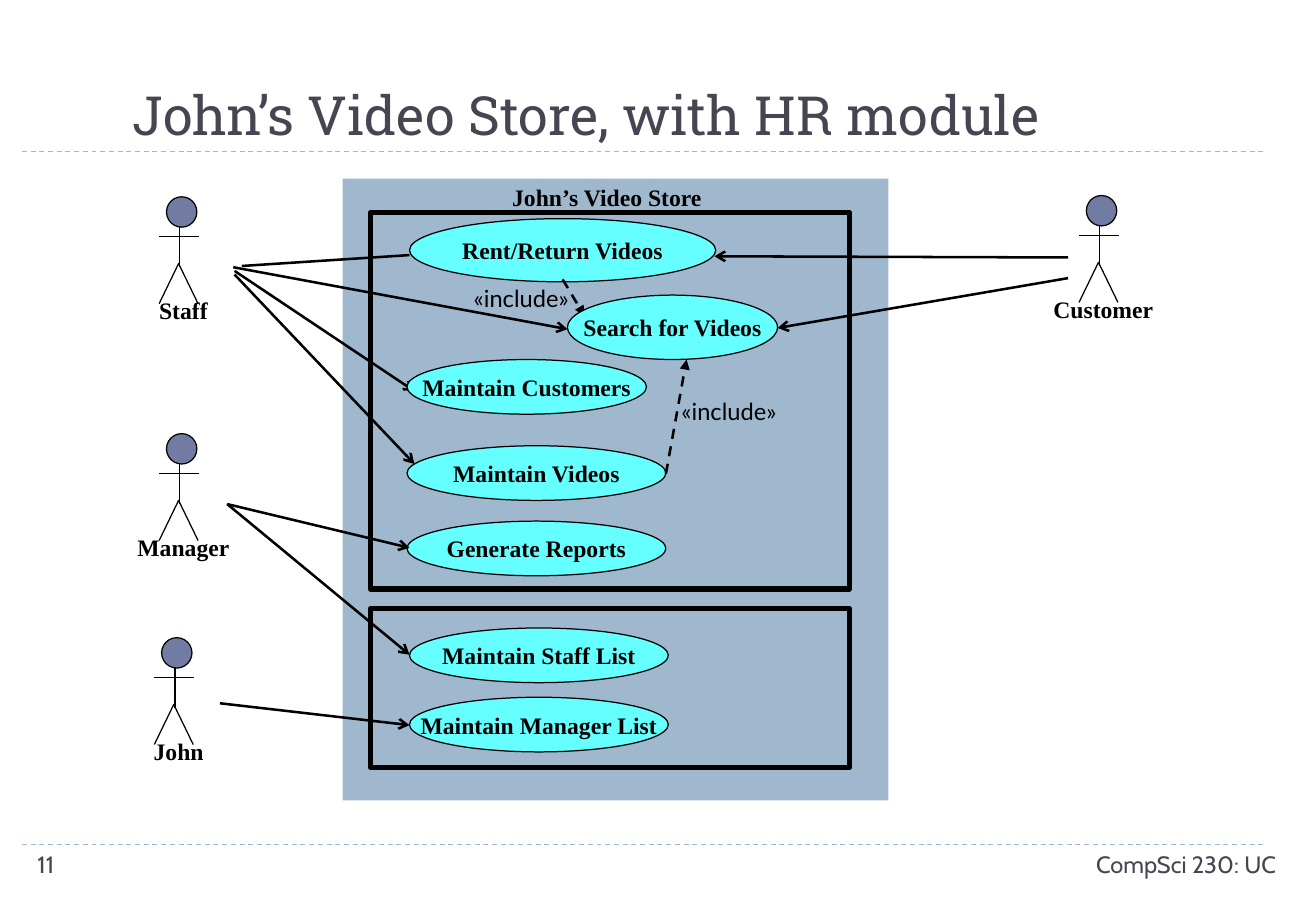
from pptx import Presentation
from pptx.dml.color import RGBColor
from pptx.enum.dml import MSO_LINE
from pptx.enum.shapes import MSO_CONNECTOR, MSO_SHAPE
from pptx.enum.text import MSO_ANCHOR, MSO_AUTO_SIZE, PP_ALIGN
from pptx.oxml.ns import qn
from pptx.util import Inches, Pt
from lxml.etree import SubElement

THEME = {
    "ink": "000000", "text": "464653", "panel": "9FB8CD",
    "head": "727CA3", "use_case": "66FFFF",
    "thin": 0.75, "link": 1.5, "frame": 3,
    "title": {"name": "Roboto Slab", "size": Pt(32)},
    "footer": {"name": "Cabin", "size": Pt(14)},
    "label": {"name": "Times New Roman", "size": Pt(14), "bold": True},
    "include": {"name": "Lato", "size": Pt(14)},
}

SLIDE_W, SLIDE_H = 10.83, 7.5
RULES = [1.25, 6.95]
PAGE_TEXTS = [
    ("John’s Video Store, with HR module", (0.99, 0.17, 9.55, 1.08), "title",
     PP_ALIGN.LEFT, MSO_ANCHOR.BOTTOM),
    ("CompSci 230: UC", (7.89, 6.95, 2.71, 0.4), "footer", PP_ALIGN.RIGHT, MSO_ANCHOR.TOP),
    ("11", (0.21, 6.95, 2.35, 0.4), "footer", PP_ALIGN.LEFT, MSO_ANCHOR.TOP),
]
SYSTEM = (2.82, 1.47, 4.49, 5.12)
MODULES = [(3.05, 1.75, 3.94, 3.1), (3.05, 5.01, 3.94, 1.31)]
ACTORS = [
    ("Staff", 1.37, 1.62, 0.6),
    ("Customer", 8.94, 1.61, 1.03),
    ("Manager", 1.37, 3.57, 0.97),
    ("John", 1.33, 5.25, 0.62),
]
RENT = ("Rent/Return Videos", (3.37, 1.8, 2.52, 0.52))
USE_CASES = [
    ("Search for Videos", (4.67, 2.43, 1.73, 0.53)),
    ("Maintain Customers", (3.35, 2.96, 1.97, 0.45)),
    ("Maintain Videos", (3.35, 3.67, 2.13, 0.45)),
    ("Generate Reports", (3.35, 4.29, 2.13, 0.45)),
    ("Maintain Staff List", (3.37, 5.17, 2.13, 0.45)),
    ("Maintain Manager List", (3.37, 5.74, 2.13, 0.45)),
]
COVERED_LINKS = [
    ((1.93, 2.23), (3.41, 3.22), "arrow", False),
    ((4.63, 2.3), (4.81, 2.6), "triangle", True),
]
LINKS = [
    ((1.99, 2.19), (3.37, 2.1), None, False),
    ((1.92, 2.2), (4.67, 2.71), "arrow", False),
    ((1.93, 2.26), (3.41, 3.82), "arrow", False),
    ((1.87, 4.15), (3.37, 4.51), "arrow", False),
    ((1.87, 4.15), (3.37, 5.39), "arrow", False),
    ((1.81, 5.79), (3.37, 5.97), "arrow", False),
    ((8.79, 2.12), (5.88, 2.11), "arrow", False),
    ((8.79, 2.29), (6.4, 2.7), "arrow", False),
    ((5.48, 3.9), (5.65, 2.96), "triangle", True),
]
LABELS = [
    ("John’s Video Store", (4.11, 1.46, 1.77, 0.34), "label"),
    ("«include»", (5.48, 3.22, 1.04, 0.34), "include"),
    ("«include»", (3.77, 2.29, 1.04, 0.34), "include"),
]


def color(name):
    return RGBColor.from_string(THEME[name])


def write(sp, text, style, ink="ink", align=PP_ALIGN.CENTER, anchor=MSO_ANCHOR.TOP, wrap=False):
    tf = sp.text_frame
    tf.word_wrap = wrap
    tf.vertical_anchor = anchor
    p = tf.paragraphs[0]
    p.alignment = align
    r = p.add_run()
    r.text = text
    for key, value in THEME[style].items():
        setattr(r.font, key, value)
    r.font.color.rgb = color(ink)


def add_label(shapes, text, box, style):
    sp = shapes.add_textbox(*map(Inches, box))
    write(sp, text, style)
    sp.text_frame.auto_size = MSO_AUTO_SIZE.SHAPE_TO_FIT_TEXT


def paint(sp, fill=None, width=None):
    sp.shadow.inherit = False
    if fill:
        sp.fill.solid()
        sp.fill.fore_color.rgb = color(fill)
    else:
        sp.fill.background()
    if width:
        sp.line.color.rgb = color("ink")
        sp.line.width = Pt(width)
    else:
        sp.line.fill.background()


def add_box(shapes, kind, box, fill=None, width=None):
    sp = shapes.add_shape(kind, *map(Inches, box))
    paint(sp, fill, width)
    return sp


def add_line(shapes, start, end, width, ink="ink", arrow=None, dashed=False):
    line = shapes.add_connector(MSO_CONNECTOR.STRAIGHT, *map(Inches, start + end))
    line.line.color.rgb = color(ink)
    line.line.width = Pt(width)
    if dashed:
        line.line.dash_style = MSO_LINE.DASH
    sp_pr = line.element.spPr
    if arrow:
        SubElement(sp_pr.find(qn("a:ln")), qn("a:tailEnd"), type=arrow)
    SubElement(sp_pr, qn("a:effectLst"))


def add_actor(shapes, name, x, y, label_w):
    actor = shapes.add_group_shape().shapes
    thin = THEME["thin"]
    add_box(actor, MSO_SHAPE.OVAL, (x, y, 0.25, 0.25), "head", thin)
    add_line(actor, (x + 0.11, y + 0.25), (x + 0.11, y + 0.58), thin)
    add_line(actor, (x - 0.06, y + 0.33), (x + 0.27, y + 0.33), thin)
    foot, hip, other_foot = [(Inches(x + dx), Inches(y + dy))
                             for dx, dy in [(-0.06, 0.88), (0.1, 0.55), (0.26, 0.88)]]
    legs = actor.build_freeform(*foot)
    legs.add_line_segments([hip, other_foot], close=False)
    paint(legs.convert_to_shape(), width=thin)
    add_label(actor, name, (x + 0.14 - label_w / 2, y + 0.77, label_w, 0.34), "label")


def add_use_case(shapes, name, box):
    sp = add_box(shapes, MSO_SHAPE.OVAL, box, "use_case", THEME["thin"])
    write(sp, name, "label", anchor=MSO_ANCHOR.MIDDLE)


def add_links(shapes, links):
    for start, end, arrow, dashed in links:
        add_line(shapes, start, end, THEME["link"], arrow=arrow, dashed=dashed)


def main():
    prs = Presentation()
    prs.slide_width, prs.slide_height = Inches(SLIDE_W), Inches(SLIDE_H)
    s = prs.slides.add_slide(prs.slide_layouts[6])
    shapes = s.shapes
    for y in RULES:
        add_line(shapes, (0.18, y), (10.42, y), THEME["thin"], "panel", dashed=True)
    for text, box, style, align, anchor in PAGE_TEXTS:
        sp = shapes.add_textbox(*map(Inches, box))
        write(sp, text, style, "text", align, anchor, True)
    add_box(shapes, MSO_SHAPE.RECTANGLE, SYSTEM, "panel")
    for box in MODULES:
        add_box(shapes, MSO_SHAPE.RECTANGLE, box, width=THEME["frame"])
    for actor in ACTORS:
        add_actor(shapes, *actor)
    add_use_case(shapes, *RENT)
    add_links(shapes, COVERED_LINKS)
    for use_case in USE_CASES:
        add_use_case(shapes, *use_case)
    add_links(shapes, LINKS)
    for label in LABELS:
        add_label(shapes, *label)
    prs.save("out.pptx")


if __name__ == "__main__":
    main()
